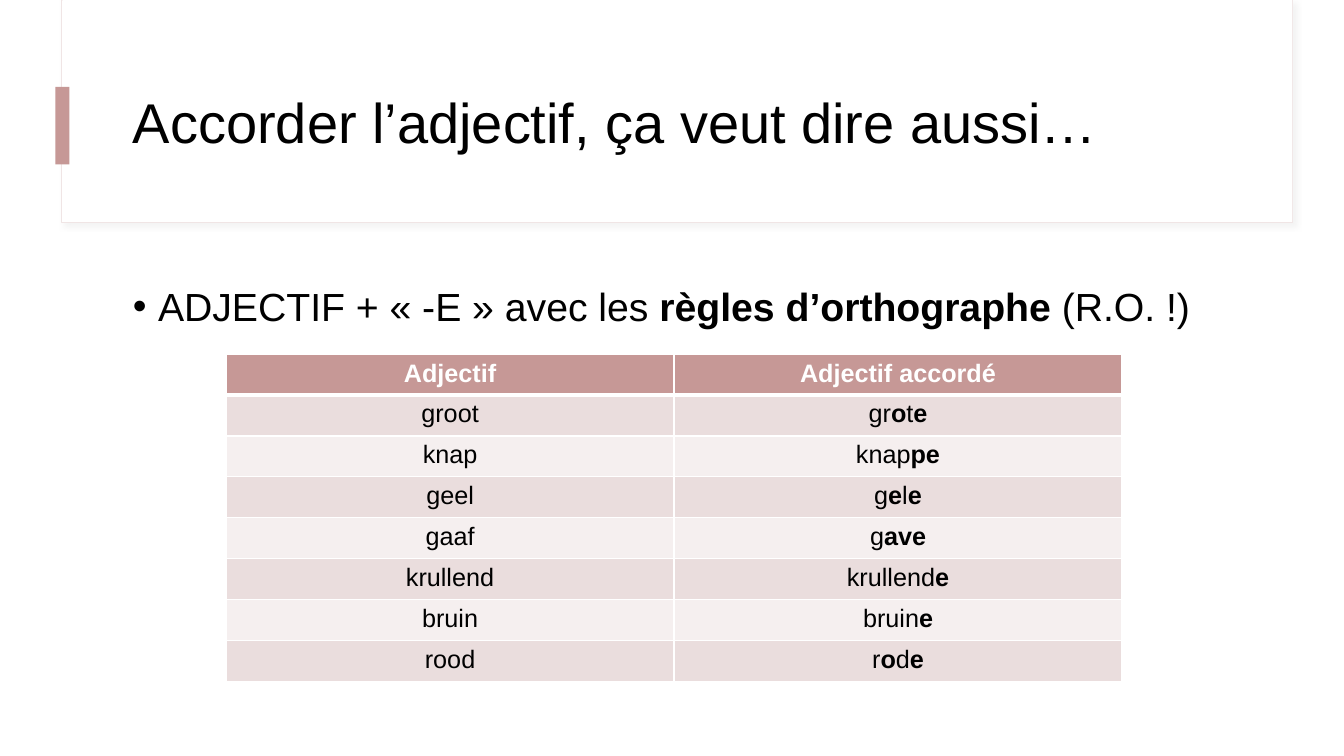
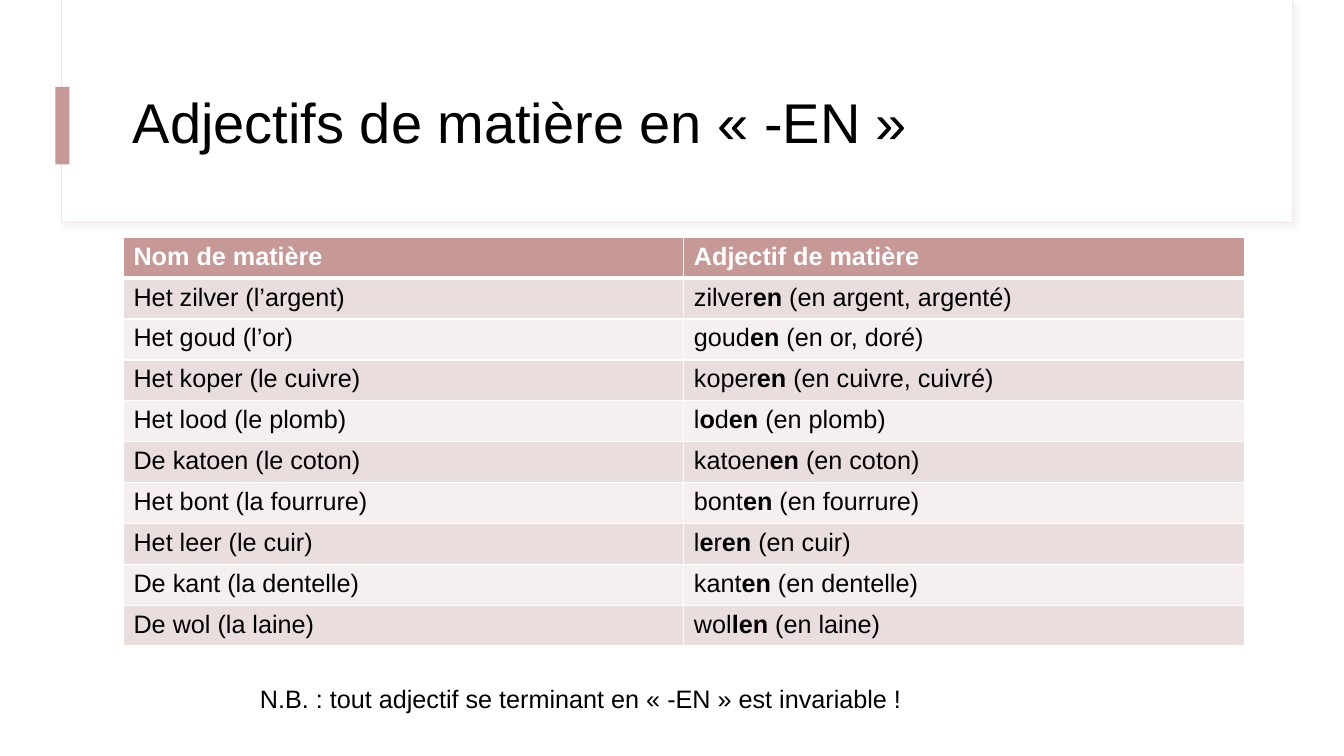
"""Build two French lesson slides on Dutch adjectives."""
import lxml.etree
import pptx
import pptx.dml.color
import pptx.enum.shapes
import pptx.enum.text
import pptx.oxml.ns
import pptx.util

Pt = pptx.util.Pt
qn = pptx.oxml.ns.qn
ALIGN = pptx.enum.text.PP_ALIGN
ANCHOR = pptx.enum.text.MSO_ANCHOR

FONT = "Arial"
COLORS = {
    "white": "FFFFFF",
    "text": "000000",
    "accent": "C69896",
    "frame": "F0E5E5",
    "shadow": "D9D9D9",
    "odd_row": "EADDDD",
    "even_row": "F5EFEF",
}
ROW_HEIGHT = 29.2

AGREEMENT_ROWS = [
    ("Adjectif", "Adjectif accordé"),
    ("groot", "gr*o*t*e*"),
    ("knap", "knap*pe*"),
    ("geel", "g*e*l*e*"),
    ("gaaf", "g*ave*"),
    ("krullend", "krullend*e*"),
    ("bruin", "bruin*e*"),
    ("rood", "r*o*d*e*"),
]
MATERIAL_ROWS = [
    ("Nom de matière", "Adjectif de matière"),
    ("Het zilver (l’argent)", "zilver*en* (en argent, argenté)"),
    ("Het goud (l’or)", "goud*en* (en or, doré)"),
    ("Het koper (le cuivre)", "koper*en* (en cuivre, cuivré)"),
    ("Het lood (le plomb)", "l*o*d*en* (en plomb)"),
    ("De katoen (le coton)", "katoen*en* (en coton)"),
    ("Het bont (la fourrure)", "bont*en* (en fourrure)"),
    ("Het leer (le cuir)", "l*e*r*en* (en cuir)"),
    ("De kant (la dentelle)", "kant*en* (en dentelle)"),
    ("De wol (la laine)", "wol*len* (en laine)"),
]


def rgb(color):
    """Return the named colour as an RGB value."""
    return pptx.dml.color.RGBColor.from_string(COLORS[color])


def write(paragraph, marked, size, color="text", bold=False):
    """Add runs, with the parts between asterisks in bold."""
    for index, part in enumerate(marked.split("*")):
        if part:
            run = paragraph.add_run()
            run.text = part
            run.font.name = FONT
            run.font.size = Pt(size)
            run.font.bold = bold or index % 2 == 1
            run.font.color.rgb = rgb(color)


def add_band(slide, box, fill, line=None):
    """Add a plain rectangle, outlined if a line colour is given."""
    band = slide.shapes.add_shape(
        pptx.enum.shapes.MSO_SHAPE.RECTANGLE, *map(Pt, box))
    band.shadow.inherit = False
    band.fill.solid()
    band.fill.fore_color.rgb = rgb(fill)
    if line:
        band.line.color.rgb = rgb(line)
        band.line.width = Pt(0.75)
    else:
        band.line.fill.background()
    return band


def add_soft_shadow(band):
    """Give a band a pale shadow towards the lower right."""
    effects = band.element.spPr.find(qn("a:effectLst"))
    shadow = lxml.etree.SubElement(
        effects, qn("a:outerShdw"), blurRad=str(Pt(4)), dist=str(Pt(3)),
        dir="2700000", algn="tl", rotWithShape="0")
    tint = lxml.etree.SubElement(shadow, qn("a:srgbClr"), val=COLORS["shadow"])
    lxml.etree.SubElement(tint, qn("a:alpha"), val="30000")


def put_header_on_layout(slide):
    """Draw the title frame and its accent, then move them to the layout."""
    frame = add_band(slide, (43.9, 0, 879.1, 159.1), "white", "frame")
    add_soft_shadow(frame)
    panel = add_band(slide, (44.6, 0, 878.4, 158.4), "white")
    accent = add_band(slide, (39.6, 62, 10, 55.4), "accent")
    layout_tree = slide.slide_layout.shapes.element
    for index, band in enumerate((frame, panel, accent), start=2):
        layout_tree.insert(index, band.element)


def set_title(slide, wording):
    """Place and format the title."""
    title = slide.shapes.title
    title.left, title.top, title.width, title.height = map(
        Pt, (87.8, 43.2, 800.6, 92.9))
    frame = title.text_frame
    frame.word_wrap = True
    frame.vertical_anchor = ANCHOR.MIDDLE
    paragraph = frame.paragraphs[0]
    paragraph.alignment = ALIGN.LEFT
    paragraph.line_spacing = 0.9
    write(paragraph, wording, 40)


def add_text(slide, box, marked, size):
    """Add a wrapping text box and return its paragraph."""
    frame = slide.shapes.add_textbox(*map(Pt, box)).text_frame
    frame.word_wrap = True
    paragraph = frame.paragraphs[0]
    write(paragraph, marked, size)
    return paragraph


def add_bullet(paragraph):
    """Turn a paragraph into a spaced bullet point."""
    paragraph.line_spacing = 1.1
    paragraph.space_before = Pt(10)
    properties = paragraph._p.get_or_add_pPr()
    properties.set("marL", str(Pt(18)))
    properties.set("indent", str(Pt(-18)))
    lxml.etree.SubElement(properties, qn("a:buFont"), typeface=FONT)
    lxml.etree.SubElement(properties, qn("a:buChar"), char="•")


def set_borders(cell, top, bottom):
    """Draw white cell borders with the given top and bottom widths."""
    properties = cell._tc.get_or_add_tcPr()
    widths = {"a:lnL": 1, "a:lnR": 1, "a:lnT": top, "a:lnB": bottom}
    for index, (side, width) in enumerate(widths.items()):
        border = lxml.etree.SubElement(properties, qn(side), w=str(Pt(width)))
        fill = lxml.etree.SubElement(border, qn("a:solidFill"))
        lxml.etree.SubElement(fill, qn("a:srgbClr"), val=COLORS["white"])
        properties.insert(index, border)


def add_word_table(slide, left, top, width, rows, alignment):
    """Add a two-column table with a header and alternating rows."""
    table = slide.shapes.add_table(
        len(rows), 2, Pt(left), Pt(top), Pt(width),
        Pt(ROW_HEIGHT * len(rows))).table
    for row_index, words in enumerate(rows):
        table.rows[row_index].height = Pt(ROW_HEIGHT)
        header = row_index == 0
        fill = "accent" if header else ("even_row", "odd_row")[row_index % 2]
        for column_index, marked in enumerate(words):
            cell = table.cell(row_index, column_index)
            cell.fill.solid()
            cell.fill.fore_color.rgb = rgb(fill)
            set_borders(cell, 3 if row_index == 1 else 1, 3 if header else 1)
            paragraph = cell.text_frame.paragraphs[0]
            paragraph.alignment = alignment
            write(paragraph, marked, 18, "white" if header else "text", header)


def main():
    """Build and save the slides."""
    deck = pptx.Presentation()
    deck.slide_width, deck.slide_height = Pt(960), Pt(540)
    title_only = deck.slide_layouts[5]

    agreement = deck.slides.add_slide(title_only)
    put_header_on_layout(agreement)
    set_title(agreement, "Accorder l’adjectif, ça veut dire aussi…")
    add_bullet(add_text(
        agreement, (87.8, 195.1, 800.6, 50),
        "ADJECTIF + « -E » avec les *règles d’orthographe *(R.O. !)", 28))
    add_word_table(agreement, 161.5, 253, 640, AGREEMENT_ROWS, ALIGN.CENTER)

    materials = deck.slides.add_slide(title_only)
    set_title(materials, "Adjectifs de matière en « -EN »")
    add_word_table(materials, 88.2, 169.5, 800.6, MATERIAL_ROWS, ALIGN.LEFT)
    add_text(
        materials, (178.6, 484.6, 559.4, 29),
        "N.B. : tout adjectif se terminant en « -EN » est invariable !", 18)

    deck.save("out.pptx")


if __name__ == "__main__":
    main()
